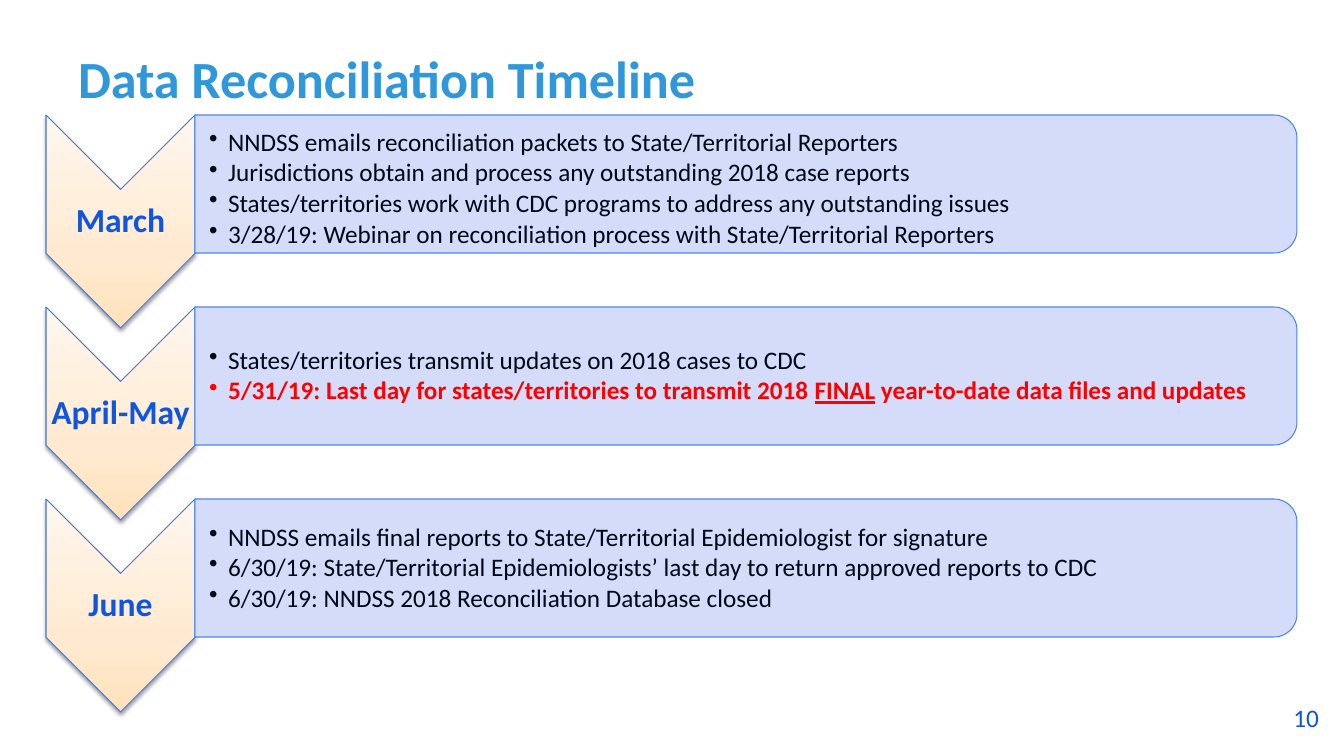
import pptx
import pptx.dml.color
import pptx.enum.shapes
import pptx.enum.text
import pptx.oxml
import pptx.oxml.ns
import pptx.util

RGBColor = pptx.dml.color.RGBColor
Shape = pptx.enum.shapes.MSO_SHAPE
Align = pptx.enum.text.PP_ALIGN
Anchor = pptx.enum.text.MSO_ANCHOR
qn = pptx.oxml.ns.qn

TITLE_BLUE = RGBColor(0x2F, 0x97, 0xDA)
LABEL_BLUE = RGBColor(0x0F, 0x56, 0xDC)
INK = RGBColor(0x00, 0x08, 0x18)
ALERT = RGBColor(0xFF, 0x00, 0x00)
SHADE = RGBColor(0x00, 0x00, 0x00)
CHEVRON_LINE = RGBColor(0x42, 0x77, 0xDC)
PANEL_LINE = RGBColor(0x49, 0x83, 0xF2)
PANEL_FILL = RGBColor(0xD0, 0xD9, 0xFA)
CHEVRON_STOPS = [
    (0, RGBColor(0xFF, 0xE2, 0xBD)),
    (35, RGBColor(0xFF, 0xEA, 0xD1)),
    (100, RGBColor(0xFF, 0xF7, 0xEE)),
]

EMU_PER_PX = 914400 / 100.8
FIRST_TOP = 115
ROW_PITCH = 192

STAGES = [
    ("March", 9, [
        "NNDSS emails reconciliation packets to State/Territorial Reporters",
        "Jurisdictions obtain and process any outstanding 2018 case reports",
        "States/territories work with CDC programs to address any outstanding issues",
        "3/28/19: Webinar on reconciliation process with State/Territorial Reporters",
    ]),
    ("April-May", 0, [
        "States/territories transmit updates on 2018 cases to CDC",
        [
            ("5/31/19: Last day for states/territories to transmit 2018 ", False),
            ("FINAL", True),
            (" year-to-date data files and updates", False),
        ],
    ]),
    ("June", 0, [
        "NNDSS emails final reports to State/Territorial Epidemiologist for signature",
        "6/30/19: State/Territorial Epidemiologists’ last day to return approved reports to CDC",
        "6/30/19: NNDSS 2018 Reconciliation Database closed",
    ]),
]


def px(length):
    return pptx.util.Emu(round(length * EMU_PER_PX))


def drawing_xml(markup):
    namespace = pptx.oxml.ns.nsdecls("a")
    return pptx.oxml.parse_xml(markup.replace(" ", f" {namespace} ", 1))


def write(para, text, size=18, color=INK, bold=False, underline=False):
    span = para.add_run()
    span.text = text
    span.font.name = "Calibri"
    span.font.size = pptx.util.Pt(size)
    span.font.color.rgb = color
    span.font.bold = bold
    if underline:
        span.font.underline = True


class TimelinePage:
    def __init__(self, deck):
        self.page = deck.slides.add_slide(deck.slide_layouts[5])

    def title(self, text):
        box = self.page.shapes.title
        box.left, box.top, box.width, box.height = map(px, (68, 46, 1210, 69))
        frame = box.text_frame
        frame.auto_size = pptx.enum.text.MSO_AUTO_SIZE.NONE
        frame.vertical_anchor = Anchor.MIDDLE
        para = frame.paragraphs[0]
        para.alignment = Align.LEFT
        para.line_spacing = pptx.util.Pt(40)
        write(para, text, size=37.3, color=TITLE_BLUE, bold=True)

    def text_frame(self, left, top, width, height, insets=(10, 5, 10, 5)):
        box = self.page.shapes.add_textbox(*map(px, (left, top, width, height)))
        frame = box.text_frame
        frame.word_wrap = True
        frame.vertical_anchor = Anchor.MIDDLE
        frame.margin_left, frame.margin_top, frame.margin_right, frame.margin_bottom = map(px, insets)
        return frame

    def turned_shape(self, kind, left, top, width, height, line):
        turned_left = left + (width - height) / 2
        turned_top = top + (height - width) / 2
        shape = self.page.shapes.add_shape(kind, *map(px, (turned_left, turned_top, height, width)))
        shape.rotation = 90
        shape.shadow.inherit = False
        shape.line.color.rgb = line
        shape.line.width = pptx.util.Pt(0.75)
        return shape

    def chevron(self, top):
        shape = self.turned_shape(Shape.CHEVRON, 46, top, 149, 213, CHEVRON_LINE)
        shape.fill.gradient()
        properties = shape.element.spPr
        stops = "".join(
            f'<a:gs pos="{place * 1000}"><a:srgbClr val="{color}"/></a:gs>'
            for place, color in CHEVRON_STOPS
        )
        properties.replace(properties.find(qn("a:gradFill")), drawing_xml(
            f'<a:gradFill rotWithShape="0"><a:gsLst>{stops}</a:gsLst>'
            '<a:lin ang="16200000" scaled="0"/></a:gradFill>'
        ))
        properties.find(qn("a:effectLst")).append(drawing_xml(
            '<a:outerShdw blurRad="40000" dist="20000" dir="5400000" rotWithShape="0">'
            f'<a:srgbClr val="{SHADE}"><a:alpha val="38000"/></a:srgbClr></a:outerShdw>'
        ))

    def label(self, text, top):
        para = self.text_frame(46, top + 75, 149, 63, (2, 2, 2, 2)).paragraphs[0]
        para.alignment = Align.CENTER
        para.line_spacing = 0.9
        write(para, text, size=24, color=LABEL_BLUE, bold=True)

    def panel(self, top):
        shape = self.turned_shape(Shape.ROUND_2_SAME_RECTANGLE, 195, top, 1102, 138, PANEL_LINE)
        shape.fill.solid()
        shape.fill.fore_color.rgb = PANEL_FILL
        color = shape.element.spPr.find(qn("a:solidFill")).find(qn("a:srgbClr"))
        color.append(drawing_xml('<a:alpha val="90000"/>'))

    def bullets(self, items, top, top_inset):
        frame = self.text_frame(195, top + 7, 1096, 125, (14, 1 + top_inset, 1, 1))
        for index, item in enumerate(items):
            para = frame.add_paragraph() if index else frame.paragraphs[0]
            para.line_spacing = 0.9
            para.space_after = pptx.util.Pt(2.4)
            properties = para._p.get_or_add_pPr()
            properties.set("marL", str(px(19)))
            properties.set("indent", str(-px(19)))
            properties.append(drawing_xml('<a:buChar char="•"/>'))
            if isinstance(item, str):
                write(para, item)
            else:
                for text, underline in item:
                    write(para, text, color=ALERT, bold=True, underline=underline)

    def page_number(self, text):
        para = self.text_frame(1202, 697, 127, 40).paragraphs[0]
        para.alignment = Align.RIGHT
        write(para, text, color=LABEL_BLUE)


def main():
    deck = pptx.Presentation()
    deck.slide_width, deck.slide_height = px(1344), px(756)
    timeline = TimelinePage(deck)
    timeline.page_number("10")
    timeline.title("Data Reconciliation Timeline")
    for row, (month, top_inset, items) in enumerate(STAGES):
        top = FIRST_TOP + row * ROW_PITCH
        timeline.chevron(top)
        timeline.label(month, top)
        timeline.panel(top)
        timeline.bullets(items, top, top_inset)
    deck.save("out.pptx")


if __name__ == "__main__":
    main()
